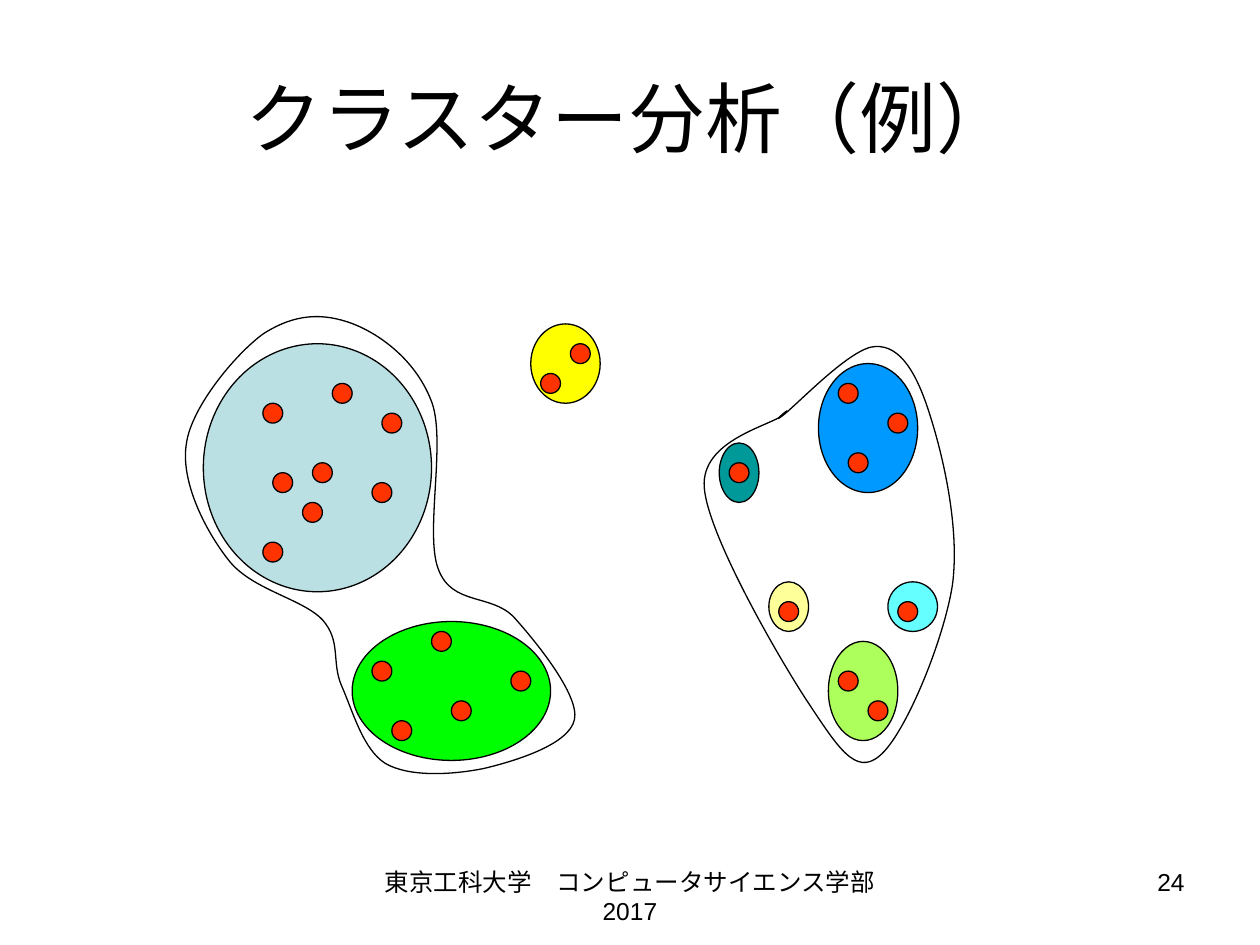
import pptx
import pptx.util
import pptx.dml.color
import pptx.enum.shapes
import pptx.enum.text
import pptx.oxml.ns
import lxml.etree

Cm = pptx.util.Cm
qn = pptx.oxml.ns.qn
sub = lxml.etree.SubElement
ALIGN = pptx.enum.text.PP_ALIGN
ANCHOR = pptx.enum.text.MSO_ANCHOR
OVAL = pptx.enum.shapes.MSO_SHAPE.OVAL

HUES = {
    "ink": "000000", "dot": "FF3300", "cyan": "66FFFF", "cream": "FFFF99",
    "teal": "009999", "lime": "99FF33", "blue": "0099FF", "yellow": "FFFF00",
    "green": "00FF00", "pale": "BBE0E3",
}

TEXTS = [
    ("クラスター分析（例）", (1.27, 0.76, 22.86, 3.18), 44, ALIGN.CENTER, ANCHOR.MIDDLE),
    ("東京工科大学　コンピュータサイエンス学部 2017", (7.2, 17.35, 11, 1.32), 14, ALIGN.CENTER, ANCHOR.TOP),
    ("24", (18.2, 17.35, 5.93, 1.32), 14, ALIGN.RIGHT, ANCHOR.TOP),
]

GROUPS = [
    ("cyan", (63, 24, 5, 5), [(64, 26)]),
    ("cream", (51, 24, 4, 5), [(52, 26)]),
    ("teal", (46, 10, 4, 6), [(47, 12)]),
    ("lime", (57, 30, 7, 10), [(58, 33), (61, 36)]),
    ("blue", (56, 2, 10, 13), [(58, 4), (63, 7), (59, 11)]),
    ("yellow", (27, -2, 7, 8), [(28, 3), (31, 0)]),
    ("green", (9, 28, 20, 14), [(19, 36), (13, 38), (17, 29), (25, 33), (11, 32)]),
    ("pale", (-6, 0, 23, 25),
     [(0, 6), (1, 13), (12, 7), (0, 20), (4, 16), (11, 14), (5, 12), (7, 4)]),
]
LEFT, TOP, STEP, DOT = 5.3, 6.93, 0.2, 2
ALPHA = {"lime": 80}

INCH = 2.54
LOOPS = [
    ((5.56, 2.74, 2.07, 3.41), [
        (6.21, 3.3),
        (6.09, 3.39), (6.32, 3.19), (6.22, 3.29),
        (6.12, 3.38), (5.56, 3.49), (5.59, 3.87),
        (5.62, 4.25), (6.18, 5.22), (6.41, 5.57),
        (6.65, 5.93), (6.79, 6.16), (6.98, 6),
        (7.18, 5.84), (7.49, 5.09), (7.56, 4.64),
        (7.62, 4.18), (7.48, 3.6), (7.38, 3.29),
        (7.28, 2.97), (7.15, 2.74), (6.95, 2.75),
        (6.76, 2.75), (6.33, 3.21), (6.21, 3.3)]),
    ((1.43, 2.48, 3.17, 3.7), [
        (2.09, 2.65),
        (1.87, 2.81), (1.52, 3.23), (1.48, 3.52),
        (1.43, 3.82), (1.63, 4.21), (1.81, 4.44),
        (1.99, 4.68), (2.4, 4.75), (2.56, 4.92),
        (2.71, 5.09), (2.63, 5.25), (2.71, 5.44),
        (2.8, 5.64), (2.88, 5.95), (3.06, 6.06),
        (3.25, 6.17), (3.59, 6.15), (3.84, 6.1),
        (4.09, 6.04), (4.52, 5.91), (4.56, 5.71),
        (4.6, 5.52), (4.26, 5.1), (4.08, 4.9),
        (3.9, 4.71), (3.59, 4.81), (3.48, 4.52),
        (3.37, 4.24), (3.54, 3.52), (3.43, 3.2),
        (3.31, 2.87), (3.03, 2.66), (2.8, 2.57),
        (2.56, 2.48), (2.34, 2.49), (2.09, 2.65)]),
]


def tint(name):
    return pptx.dml.color.RGBColor.from_string(HUES[name])


def apply(item, vals):
    for key, val in vals.items():
        setattr(item, key, val)


def style(shape, fill=None):
    shape.shadow.inherit = False
    shape.line.width = pptx.util.Pt(0.75)
    shape.line.color.rgb = tint("ink")
    if fill is None:
        shape.fill.background()
        return
    shape.fill.solid()
    shape.fill.fore_color.rgb = tint(fill)
    if fill in ALPHA:
        node = next(shape._element.spPr.iter(qn("a:srgbClr")))
        sub(node, qn("a:alpha"), val=str(ALPHA[fill] * 1000))


def oval(slide, fill, x, y, w, h):
    box = (LEFT + x * STEP, TOP + y * STEP, w * STEP, h * STEP)
    style(slide.shapes.add_shape(OVAL, *map(Cm, box)), fill)


def loop(slide, box, pts):
    x, y, w, h = (Cm(v * INCH) for v in box)
    form = slide.shapes.build_freeform(x, y)
    form.add_line_segments([(x + w, y), (x + w, y + h), (x, y + h)], close=True)
    shape = form.convert_to_shape()
    style(shape)
    track = next(shape._element.spPr.iter(qn("a:path")))
    for node in list(track):
        track.remove(node)
    move = sub(track, qn("a:moveTo"))
    for i, (px, py) in enumerate(pts):
        if i % 3 == 1:
            move = sub(track, qn("a:cubicBezTo"))
        sub(move, qn("a:pt"), x=str(Cm(px * INCH) - x), y=str(Cm(py * INCH) - y))
    sub(track, qn("a:close"))


def label(slide, words, box, size, align, anchor):
    frame = slide.shapes.add_textbox(*map(Cm, box)).text_frame
    apply(frame, {"word_wrap": True, "vertical_anchor": anchor})
    para = frame.paragraphs[0]
    para.alignment = align
    run = para.add_run()
    run.text = words
    apply(run.font, {"name": "Arial", "size": pptx.util.Pt(size)})
    run.font.color.rgb = tint("ink")


def main():
    deck = pptx.Presentation()
    apply(deck, {"slide_width": Cm(25.4), "slide_height": Cm(19.05)})
    slide = deck.slides.add_slide(deck.slide_layouts[6])
    for fill, box, dots in GROUPS:
        oval(slide, fill, *box)
    label(slide, *TEXTS[0])
    for fill, box, dots in GROUPS:
        for x, y in dots:
            oval(slide, "dot", x, y, DOT, DOT)
    for box, pts in LOOPS:
        loop(slide, box, pts)
    for text in TEXTS[1:]:
        label(slide, *text)
    deck.save("out.pptx")


if __name__ == "__main__":
    main()
